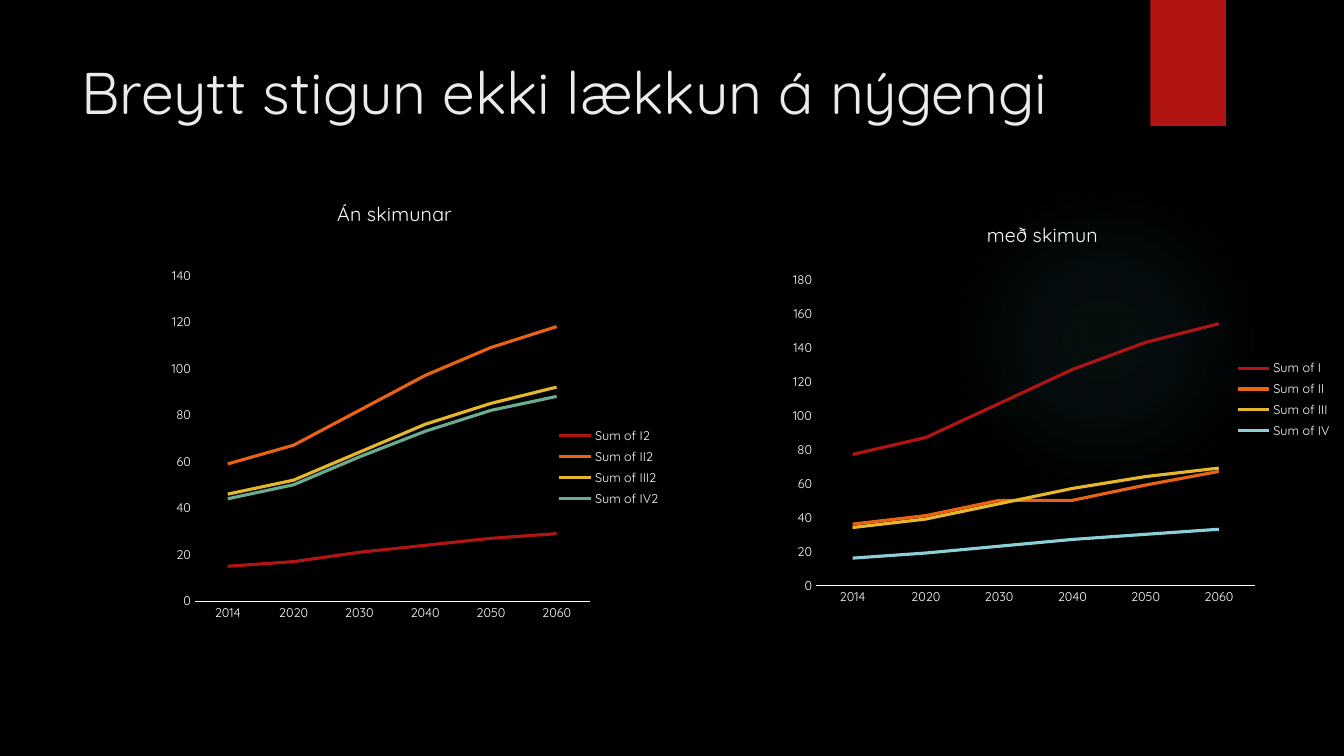
from lxml import etree
from pptx import Presentation
from pptx.chart.data import CategoryChartData as ChartData
from pptx.dml.color import RGBColor as Color
from pptx.enum.chart import XL_CHART_TYPE as ChartType
from pptx.enum.chart import XL_LEGEND_POSITION as LegendPosition
from pptx.enum.chart import XL_TICK_MARK as TickMark
from pptx.enum.shapes import MSO_SHAPE as Shape
from pptx.oxml import parse_xml
from pptx.oxml.ns import nsdecls, qn
from pptx.util import Inches, Pt

COLOURS = {
    "back": "000000", "white": "FFFFFF", "heading": "EBEBEB", "glow": "50B9C1",
    "red": "B01513", "orange": "EA6312", "yellow": "E6B729",
    "green": "6AAC90", "sky": "8AD0D6",
}
FONT = "Quicksand"
YEARS = ["2014", "2020", "2030", "2040", "2050", "2060"]

# Layout values are fractions of the chart: left, top, then width, height.
CHARTS = [
    {
        "at": (7.26, 1.92, 6.08, 4.59), "title": "með skimun", "top": 180,
        "title_at": (0.41, 0.05), "plot_at": (0.137, 0.186, 0.717, 0.661),
        "legend_at": (0.81, 0.35, 0.18, 0.19),
        "series": [
            ("Sum of I", "red", (77, 87, 107, 127, 143, 154)),
            ("Sum of II", "orange", (36, 41, 50, 50, 59, 67)),
            ("Sum of III", "yellow", (34, 39, 48, 57, 64, 69)),
            ("Sum of IV", "sky", (16, 19, 23, 27, 30, 33)),
        ],
    },
    {
        "at": (1.18, 1.75, 5.46, 4.89), "title": "Án skimunar", "top": 140,
        "title_at": (0.39, 0.04), "plot_at": (0.138, 0.201, 0.717, 0.661),
        "legend_at": (0.79, 0.5, 0.2, 0.18),
        "series": [
            ("Sum of I2", "red", (15, 17, 21, 24, 27, 29)),
            ("Sum of II2", "orange", (59, 67, 82, 97, 109, 118)),
            ("Sum of III2", "yellow", (46, 52, 64, 76, 85, 92)),
            ("Sum of IV2", "green", (44, 50, 62, 73, 82, 88)),
        ],
    },
]


def colour(name):
    return Color.from_string(COLOURS[name])


def inches(values):
    return [Inches(value) for value in values]


def style_font(font, size, name="white"):
    for key, value in {"name": FONT, "size": Pt(size), "bold": False}.items():
        setattr(font, key, value)
    font.color.rgb = colour(name)


def add_plain_shape(page, kind, at, fill):
    shape = page.shapes.add_shape(kind, *inches(at))
    shape.shadow.inherit = False
    shape.line.fill.background()
    shape.fill.solid()
    shape.fill.fore_color.rgb = colour(fill)
    return shape


def add_glow(page, at):
    """Add a circle that fades out from its centre."""
    glow = add_plain_shape(page, Shape.OVAL, at, "glow")
    stops = "".join(
        f'<a:gs pos="{place}000"><a:srgbClr val="{COLOURS["glow"]}">'
        f'<a:alpha val="{alpha}000"/></a:srgbClr></a:gs>'
        for place, alpha in ((0, 7), (36, 6), (69, 0)))
    gradient = parse_xml(
        f'<a:gradFill {nsdecls("a")}><a:gsLst>{stops}</a:gsLst><a:path path="circle">'
        '<a:fillToRect l="50000" t="50000" r="50000" b="50000"/></a:path></a:gradFill>')
    properties = glow.element.spPr
    properties.replace(properties.find(qn("a:solidFill")), gradient)


def add_heading(page, at, text):
    box = page.shapes.add_textbox(*inches(at))
    box.text_frame.word_wrap = True
    span = box.text_frame.paragraphs[0].add_run()
    span.text = text
    style_font(span.font, 42, "heading")


def set_layout(element, values, before, inner=False):
    """Fix the place of a chart part; the layout goes ahead of the `before` tags."""
    for old in element.findall(qn("c:layout")):
        element.remove(old)
    layout = etree.Element(qn("c:layout"))
    manual = etree.SubElement(layout, qn("c:manualLayout"))
    settings = [("layoutTarget", "inner")] if inner else []
    settings += [("xMode", "edge"), ("yMode", "edge")]
    settings += list(zip("xywh", values))
    for tag, value in settings:
        etree.SubElement(manual, qn(f"c:{tag}")).set("val", str(value))
    following = [child for child in element if child.tag in map(qn, before)]
    if following:
        following[0].addprevious(layout)
    else:
        element.append(layout)


def style_axes(chart, top):
    for axis in (chart.category_axis, chart.value_axis):
        axis.has_major_gridlines = False
        axis.major_tick_mark = axis.minor_tick_mark = TickMark.NONE
        style_font(axis.tick_labels.font, 9)
    line = chart.category_axis.format.line
    line.width = Pt(0.75)
    line.color.rgb = colour("white")
    scale = {"minimum_scale": 0, "maximum_scale": top, "major_unit": 20}
    for key, value in scale.items():
        setattr(chart.value_axis, key, value)
    chart.value_axis.format.line.fill.background()


def add_line_chart(page, content):
    data = ChartData()
    data.categories = YEARS
    for name, _, values in content["series"]:
        data.add_series(name, values)
    frame = page.shapes.add_chart(ChartType.LINE, *inches(content["at"]), data)
    chart = frame.chart
    style_font(chart.font, 10)
    style_axes(chart, content["top"])

    chart.has_title = True
    para = chart.chart_title.text_frame.paragraphs[0]
    span = para.add_run()
    span.text = content["title"]
    style_font(span.font, 14)
    chart.chart_title.include_in_layout = False

    chart.has_legend = True
    chart.legend.position = LegendPosition.RIGHT
    chart.legend.include_in_layout = False
    style_font(chart.legend.font, 9)

    chart.plots[0].vary_by_categories = False
    for series, (_, name, _) in zip(chart.plots[0].series, content["series"]):
        series.smooth = False
        series.format.line.width = Pt(2.25)
        series.format.line.color.rgb = colour(name)

    plot_area = chart.element.chart.plotArea
    set_layout(plot_area, content["plot_at"], ["c:lineChart"], inner=True)
    set_layout(chart.legend._element, content["legend_at"],
               ["c:overlay", "c:spPr", "c:txPr"])
    set_layout(chart.chart_title._element, content["title_at"],
               ["c:overlay", "c:spPr", "c:txPr"])


def main():
    deck = Presentation()
    deck.slide_width, deck.slide_height = inches((13.33, 7.5))
    page = deck.slides.add_slide(deck.slide_layouts[6])
    page.background.fill.solid()
    page.background.fill.fore_color.rgb = colour("back")
    add_glow(page, (9.41, 1.83, 3.08, 3.08))
    add_plain_shape(page, Shape.RECTANGLE, (11.41, 0, 0.75, 1.25), "red")
    add_heading(page, (0.71, 0.5, 10.29, 1.53), "Breytt stigun ekki lækkun á nýgengi")
    for content in CHARTS:
        add_line_chart(page, content)
    deck.save("out.pptx")


if __name__ == "__main__":
    main()
